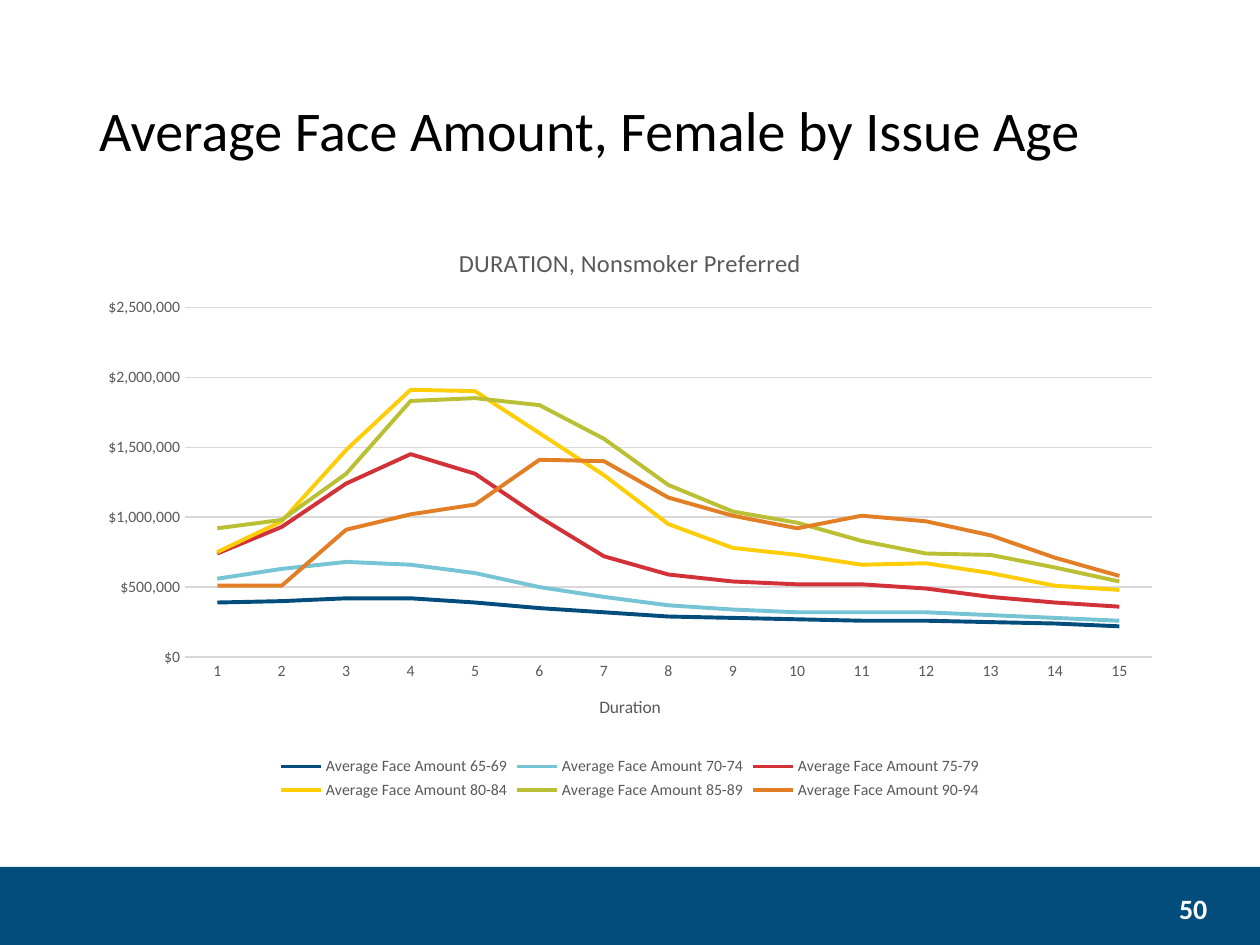
from pptx import Presentation
from pptx.chart.data import CategoryChartData
from pptx.dml.color import RGBColor
from pptx.enum.chart import XL_CHART_TYPE, XL_LEGEND_POSITION, XL_TICK_MARK
from pptx.enum.shapes import MSO_SHAPE
from pptx.enum.text import MSO_ANCHOR, PP_ALIGN
from pptx.util import Pt

GRAY, RULE = "595959", "D9D9D9"


def color(hex_value):
    return RGBColor.from_string(hex_value)


def set_font(font, size, hex_value, bold=False):
    values = {"name": "Calibri", "size": Pt(size), "bold": bold}
    for name, value in values.items():
        setattr(font, name, value)
    font.color.rgb = color(hex_value)


deck = Presentation()
deck.slide_width, deck.slide_height = Pt(720), Pt(540)
page = deck.slides.add_slide(deck.slide_layouts[5])

# Footer band
band = page.shapes.add_shape(MSO_SHAPE.RECTANGLE, 0, Pt(495.4), Pt(720), Pt(44.6))
band.shadow.inherit = False
band.fill.solid()
band.fill.fore_color.rgb = color("024D7C")
band.line.fill.background()

# Title
title = page.shapes.title
place = {"left": Pt(49.5), "top": Pt(26), "width": Pt(621), "height": Pt(101)}
for name, value in place.items():
    setattr(title, name, value)
title.text_frame.text = "Average Face Amount, Female by Issue Age"
title.text_frame.vertical_anchor = MSO_ANCHOR.MIDDLE
para = title.text_frame.paragraphs[0]
para.alignment = PP_ALIGN.LEFT
para.line_spacing = 0.9
set_font(para.runs[0].font, 32, "000000")

# Page number
box = page.shapes.add_textbox(Pt(659), Pt(511), Pt(38), Pt(16))
frame = box.text_frame
frame.word_wrap = True
frame.vertical_anchor = MSO_ANCHOR.MIDDLE
para = frame.paragraphs[0]
para.alignment = PP_ALIGN.RIGHT
span = para.add_run()
span.text = "50"
set_font(span.font, 16, "FFFFFF", bold=True)

# Face amounts in thousands of dollars, by issue age
amounts = [
    ("65-69", "024D7C", [390, 400, 420, 420, 390, 350, 320, 290, 280, 270, 260, 260, 250, 240, 220]),
    ("70-74", "77C4D5", [560, 630, 680, 660, 600, 500, 430, 370, 340, 320, 320, 320, 300, 280, 260]),
    ("75-79", "D23138", [740, 930, 1240, 1450, 1310, 1000, 720, 590, 540, 520, 520, 490, 430, 390, 360]),
    ("80-84", "FDCE07", [750, 970, 1480, 1910, 1900, 1600, 1300, 950, 780, 730, 660, 670, 600, 510, 480]),
    ("85-89", "BABF33", [920, 980, 1310, 1830, 1850, 1800, 1560, 1230, 1040, 960, 830, 740, 730, 640, 540]),
    ("90-94", "E27F26", [510, 510, 910, 1020, 1090, 1410, 1400, 1140, 1010, 920, 1010, 970, 870, 710, 580]),
]
data = CategoryChartData(number_format='"$"#,##0')
data.categories = [str(year) for year in range(1, 16)]
for ages, _, thousands in amounts:
    data.add_series(f"Average Face Amount {ages}", [value * 1000 for value in thousands])

# Line chart
chart = page.shapes.add_chart(
    XL_CHART_TYPE.LINE, Pt(49.5), Pt(127.5), Pt(621), Pt(332), data).chart
set_font(chart.font, 10, "000000")
chart.plots[0].vary_by_categories = False
for series, (_, line_color, _) in zip(chart.plots[0].series, amounts):
    series.smooth = False
    series.format.line.width = Pt(2.25)
    series.format.line.color.rgb = color(line_color)

# Axes
years, dollars = chart.category_axis, chart.value_axis
for axis in (years, dollars):
    axis.major_tick_mark = axis.minor_tick_mark = XL_TICK_MARK.NONE
    set_font(axis.tick_labels.font, 9, GRAY)
dollars.minimum_scale, dollars.maximum_scale, dollars.major_unit = 0, 2500000, 500000
dollars.tick_labels.number_format = '"$"#,##0'
dollars.tick_labels.number_format_is_linked = False
dollars.format.line.fill.background()
for rule in (years.format.line, dollars.major_gridlines.format.line):
    rule.width = Pt(0.75)
    rule.color.rgb = color(RULE)

# Chart and axis titles
for owner, text, size in ((chart, "DURATION, Nonsmoker Preferred", 14), (years, "Duration", 10)):
    owner.has_title = True
    heading = (owner.chart_title if owner is chart else owner.axis_title).text_frame
    heading.text = text
    set_font(heading.paragraphs[0].runs[0].font, size, GRAY)

# Legend
chart.has_legend = True
chart.legend.position = XL_LEGEND_POSITION.BOTTOM
chart.legend.include_in_layout = False
set_font(chart.legend.font, 9, GRAY)

deck.save("out.pptx")
